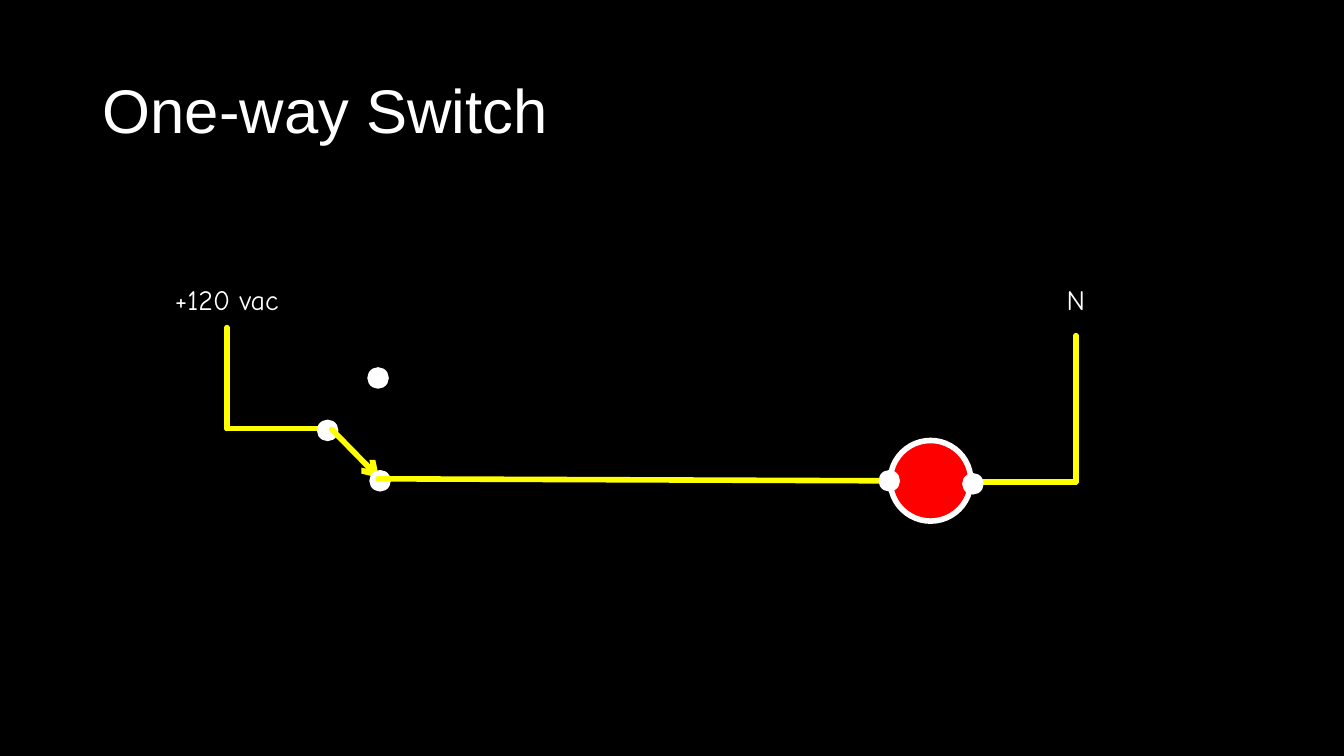
from lxml import etree
from pptx import Presentation
from pptx import util as u
from pptx.dml.color import RGBColor
from pptx.enum import shapes, text
from pptx.oxml.ns import qn

COLORS = {"background": "000000", "ink": "FFFFFF", "wire": "FFFF00", "lamp": "FF0000"}
DOT = 0.2


def rgb(name):
    return RGBColor.from_string(COLORS[name])


def add_text(slide, box, words, font, size, align, anchor):
    shape = slide.shapes.add_textbox(*map(u.Inches, box))
    frame = shape.text_frame
    frame.word_wrap = True
    frame.vertical_anchor = anchor
    paragraph = frame.paragraphs[0]
    paragraph.text = words
    paragraph.alignment = align
    paragraph.font.name = font
    paragraph.font.size = u.Pt(size)
    paragraph.font.color.rgb = rgb("ink")
    return paragraph


def add_wire(slide, start, end, arrow=False):
    wire = slide.shapes.add_connector(
        shapes.MSO_CONNECTOR.STRAIGHT, *map(u.Inches, (*start, *end)))
    wire.line.color.rgb = rgb("wire")
    wire.line.width = u.Pt(4)
    properties = wire._element.spPr
    line = properties.find(qn("a:ln"))
    line.set("cap", "rnd")
    etree.SubElement(line, qn("a:round"))
    if arrow:
        etree.SubElement(line, qn("a:tailEnd"), type="arrow")
    etree.SubElement(properties, qn("a:effectLst"))


def add_circle(slide, left, top, size, fill="ink", line_width=1):
    circle = slide.shapes.add_shape(
        shapes.MSO_SHAPE.OVAL, *map(u.Inches, (left, top, size, size)))
    circle.shadow.inherit = False
    circle.fill.solid()
    circle.fill.fore_color.rgb = rgb(fill)
    circle.line.color.rgb = rgb("ink")
    circle.line.width = u.Pt(line_width)


def add_title(slide, box):
    paragraph = add_text(slide, box, "One-way Switch", "Arial", 44,
                         text.PP_ALIGN.LEFT, text.MSO_ANCHOR.MIDDLE)
    paragraph.line_spacing = 0.9


def add_supply(slide, box, label, wire_top, lead):
    left, top, width, height = box
    center = left + width / 2
    bottom = top + height
    add_text(slide, (left, top, width, 0.44), label, "Comic Neue", 20,
             text.PP_ALIGN.CENTER, text.MSO_ANCHOR.TOP)
    add_wire(slide, (center, top + wire_top), (center, bottom))
    add_wire(slide, (center, bottom), (center + lead, bottom))


def add_switch(slide, box):
    left, top, width, height = box
    right, bottom = left + width, top + height
    add_circle(slide, left, top + 0.52, DOT)
    add_circle(slide, right - DOT - 0.02, top, DOT)
    add_wire(slide, (left + 0.14, top + 0.61), (right - 0.11, bottom - 0.13), arrow=True)
    add_circle(slide, right - DOT, bottom - DOT, DOT)


def add_lamp(slide, box):
    left, top, width, height = box
    add_circle(slide, left + 0.11, top, height, "lamp", 4)
    add_circle(slide, left, top + 0.3, DOT)
    add_circle(slide, left + width - DOT, top + 0.33, DOT)


def main():
    presentation = Presentation()
    presentation.slide_width = u.Inches(13.33)
    presentation.slide_height = u.Inches(7.5)
    slide = presentation.slides.add_slide(presentation.slide_layouts[6])
    slide.background.fill.solid()
    slide.background.fill.fore_color.rgb = rgb("background")

    add_title(slide, (0.92, 0.4, 11.5, 1.45))
    add_supply(slide, (1.5, 2.75, 1.5, 1.5), "+120 vac", 0.5, 1)
    add_supply(slide, (9.92, 2.75, 1.5, 2.03), "N", 0.58, -1)
    add_switch(slide, (3.15, 3.65, 0.72, 1.22))
    add_wire(slide, (3.75, 4.75), (8.72, 4.77))
    add_lamp(slide, (8.72, 4.37, 1.03, 0.8))
    presentation.save("out.pptx")


if __name__ == "__main__":
    main()
